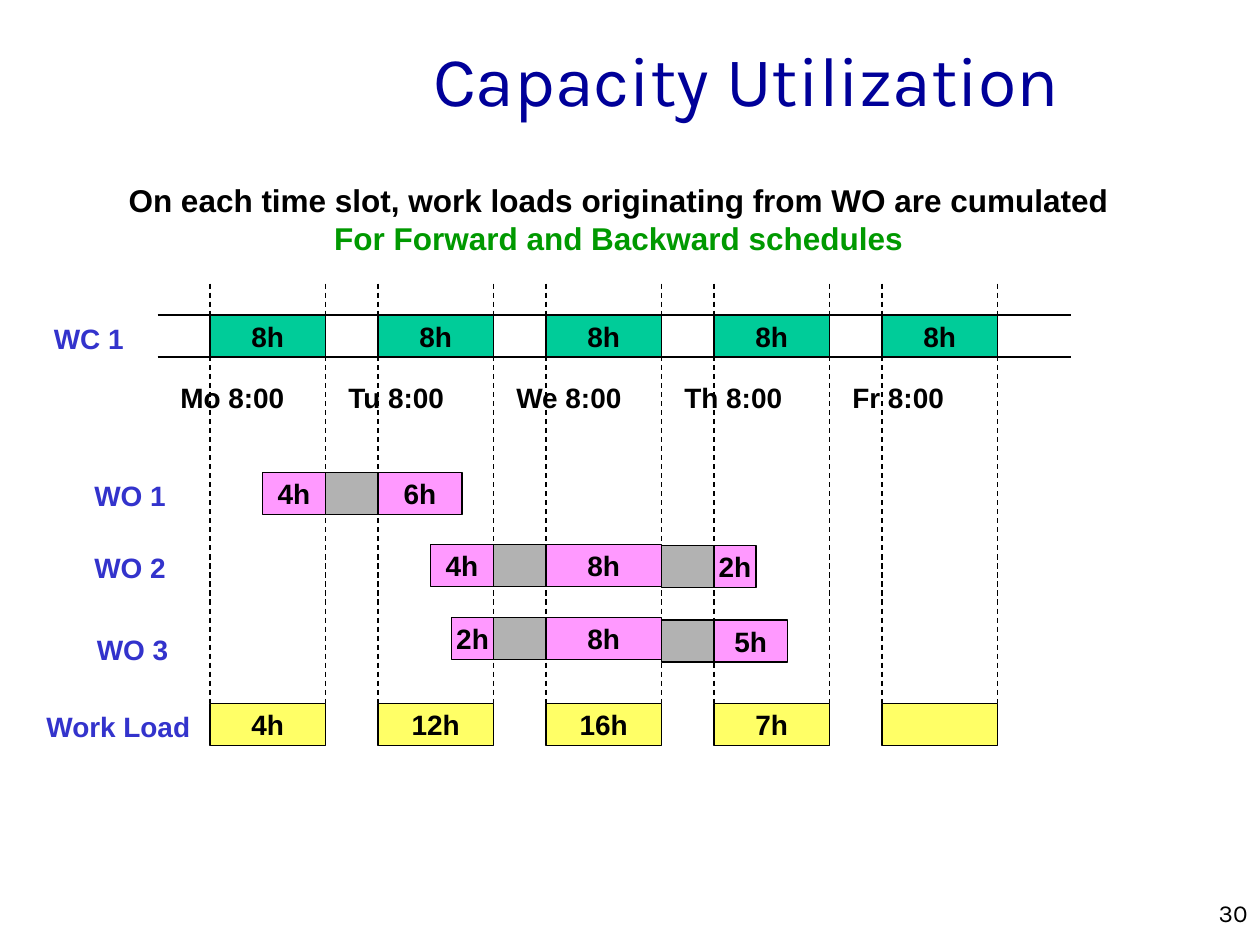
from dataclasses import dataclass
from typing import Any, NamedTuple

import pptx
import pptx.dml.color
import pptx.enum.dml
import pptx.enum.shapes
import pptx.enum.text
import pptx.oxml.ns
import pptx.util
from lxml import etree

Inches = pptx.util.Inches
ALIGN = pptx.enum.text.PP_ALIGN
ANCHOR = pptx.enum.text.MSO_ANCHOR


@dataclass(frozen=True)
class Theme:
    body_font: str = "Arial"
    title_font: str = "Karla"
    title_size: int = 40
    lead_size: int = 18
    label_size: int = 16
    page_size: int = 14
    line_width: float = 0.75
    black: str = "000000"
    title: str = "000099"
    accent: str = "009900"
    label: str = "3333CC"
    capacity: str = "00CC99"
    order: str = "FF99FF"
    idle: str = "B2B2B2"
    load: str = "FFFF66"


class Label(NamedTuple):
    text: str
    left: float
    top: float
    width: float


class Day(NamedTuple):
    name: str
    width: float
    load: str


class Chain(NamedTuple):
    """Adjoining bars; start and widths are in time units, no text is idle time."""
    top: float
    start: int
    bars: list[tuple[int, str]]


T = Theme()

# Time grid: twelve units to the inch
UNIT = 1 / 12
FIRST_DAY, DAY_PITCH, DAY_LENGTH = 20, 16, 11
BAR_HEIGHT = 4 * UNIT
LABEL_HEIGHT = 0.37
CAPACITY_TOP, LOAD_TOP = 2.5, 67 * UNIT

DAYS = [
    Day("Mo 8:00", 1.03, "4h"),
    Day("Tu 8:00", 0.98, "12h"),
    Day("We 8:00", 1.04, "16h"),
    Day("Th 8:00", 0.98, "7h"),
    Day("Fr 8:00", 0.93, ""),
]
ROW_LABELS = [
    Label("WC 1", 0.33, 2.5, 0.76),
    Label("WO 1", 0.65, 3.75, 0.77),
    Label("WO 2", 0.65, 4.32, 0.77),
    Label("WO 3", 0.67, 4.97, 0.77),
    Label("Work Load", 0.27, 5.58, 1.35),
]
CHAINS_BEHIND = [
    Chain(3.75, 25, [(6, "4h"), (5, ""), (8, "6h")]),
    Chain(4.32, 41, [(6, "4h"), (5, ""), (11, "8h")]),
]
CHAINS_IN_FRONT = [
    Chain(4.33, 63, [(5, ""), (4, "2h")]),
    Chain(4.9, 43, [(4, "2h"), (5, ""), (11, "8h")]),
    Chain(4.92, 63, [(5, ""), (7, "5h")]),
]


def rgb(color: str) -> pptx.dml.color.RGBColor:
    return pptx.dml.color.RGBColor.from_string(color)


def add_run(p: Any, text: str, size: int, color: str,
            font: str = T.body_font, bold: bool = True) -> None:
    r = p.add_run()
    r.text = text
    r.font.name, r.font.size, r.font.bold = font, pptx.util.Pt(size), bold
    r.font.color.rgb = rgb(color)


def add_box(s: Any, left: float, top: float, width: float, height: float,
            wrap: bool = False) -> Any:
    box = s.shapes.add_textbox(Inches(left), Inches(top), Inches(width), Inches(height))
    tf = box.text_frame
    tf.word_wrap = wrap
    if not wrap:
        tf.auto_size = pptx.enum.text.MSO_AUTO_SIZE.SHAPE_TO_FIT_TEXT
    return tf


def add_label(s: Any, label: Label, color: str) -> None:
    tf = add_box(s, label.left, label.top, label.width, LABEL_HEIGHT)
    add_run(tf.paragraphs[0], label.text, T.label_size, color)


def add_bar(s: Any, start: int, top: float, length: int, text: str, fill: str) -> None:
    sp = s.shapes.add_shape(
        pptx.enum.shapes.MSO_SHAPE.RECTANGLE,
        Inches(start * UNIT), Inches(top), Inches(length * UNIT), Inches(BAR_HEIGHT))
    sp.shadow.inherit = False
    sp.fill.solid()
    sp.fill.fore_color.rgb = rgb(fill)
    sp.line.color.rgb = rgb(T.black)
    sp.line.width = pptx.util.Pt(T.line_width)
    if text:
        tf = sp.text_frame
        tf.word_wrap, tf.vertical_anchor = False, ANCHOR.MIDDLE
        p = tf.paragraphs[0]
        p.alignment = ALIGN.CENTER
        add_run(p, text, T.label_size, T.black)


def add_chain(s: Any, chain: Chain) -> None:
    start = chain.start
    for length, text in chain.bars:
        add_bar(s, start, chain.top, length, text, T.order if text else T.idle)
        start += length


def add_line(s: Any, x1: float, y1: float, x2: float, y2: float,
             dashed: bool = False) -> None:
    line = s.shapes.add_connector(
        pptx.enum.shapes.MSO_CONNECTOR.STRAIGHT,
        Inches(x1), Inches(y1), Inches(x2), Inches(y2))
    line.line.color.rgb = rgb(T.black)
    line.line.width = pptx.util.Pt(T.line_width)
    if dashed:
        line.line.dash_style = pptx.enum.dml.MSO_LINE.DASH
    etree.SubElement(line._element.spPr, pptx.oxml.ns.qn("a:effectLst"))


def add_headings(s: Any) -> None:
    tf = add_box(s, 0, 0, 8.5, 1.25, wrap=True)
    tf.vertical_anchor = ANCHOR.MIDDLE
    p = tf.paragraphs[0]
    p.alignment = ALIGN.RIGHT
    add_run(p, "Capacity Utilization", T.title_size, T.title, T.title_font, False)

    tf = add_box(s, 0.92, 1.39, 7.98, 0.7)
    lead, note = tf.paragraphs[0], tf.add_paragraph()
    lead.alignment = note.alignment = ALIGN.CENTER
    add_run(lead, "On each time slot, work loads originating from WO are cumulated",
            T.lead_size, T.black)
    add_run(note, "For Forward and Backward schedules", T.lead_size, T.accent)

    p = add_box(s, 7.92, 7.08, 2.08, 0.25, wrap=True).paragraphs[0]
    p.alignment = ALIGN.RIGHT
    add_run(p, "30", T.page_size, T.black, T.title_font, False)


def main() -> None:
    prs = pptx.Presentation()
    prs.slide_width, prs.slide_height = Inches(10), Inches(7.5)
    s = prs.slides.add_slide(prs.slide_layouts[6])
    add_headings(s)
    day_starts = [FIRST_DAY + i * DAY_PITCH for i in range(len(DAYS))]

    # Work centre capacity and day names
    for start, day in zip(day_starts, DAYS):
        add_bar(s, start, CAPACITY_TOP, DAY_LENGTH, "8h", T.capacity)
        add_label(s, Label(day.name, (start - 4) * UNIT, 2.97, day.width), T.black)
    for y in (CAPACITY_TOP, CAPACITY_TOP + BAR_HEIGHT):
        add_line(s, 1.25, y, 8.5, y)

    # Row labels
    for label in ROW_LABELS:
        add_label(s, label, T.label)

    # Work orders, with the day limits between the two layers
    for chain in CHAINS_BEHIND:
        add_chain(s, chain)
    for start in day_starts:
        for x in (start * UNIT, (start + DAY_LENGTH) * UNIT):
            add_line(s, x, 2.25, x, LOAD_TOP, dashed=True)
    for chain in CHAINS_IN_FRONT:
        add_chain(s, chain)

    # Cumulated work load
    for start, day in zip(day_starts, DAYS):
        add_bar(s, start, LOAD_TOP, DAY_LENGTH, day.load, T.load)

    prs.save("out.pptx")


if __name__ == "__main__":
    main()
